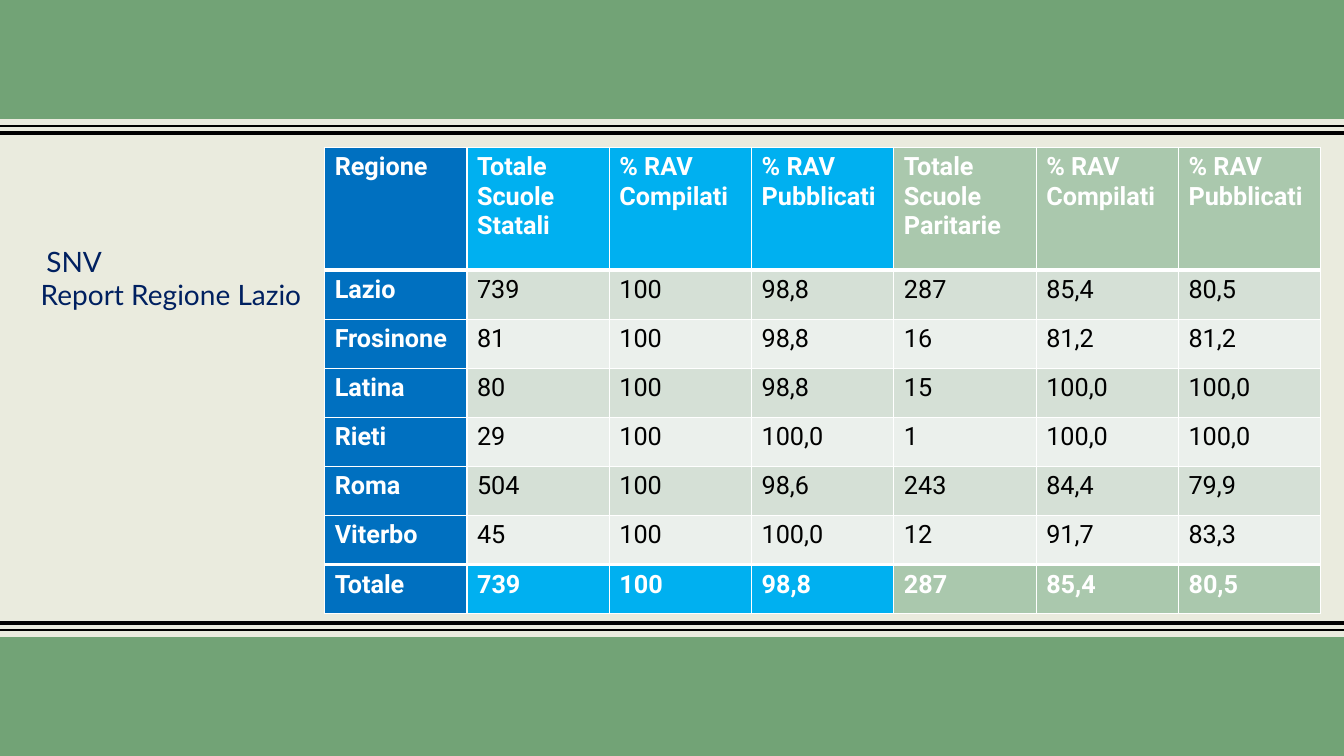
import pptx
import pptx.dml.color
import pptx.enum.shapes
import pptx.enum.text
import pptx.oxml
import pptx.oxml.ns
import pptx.util
from lxml import etree

RGBColor = pptx.dml.color.RGBColor
Inches = pptx.util.Inches
Pt = pptx.util.Pt

CREAM = RGBColor(0xEA, 0xEB, 0xDE)
GREEN = RGBColor(0x72, 0xA3, 0x76)
NAVY = RGBColor(0x00, 0x20, 0x60)
BLUE = RGBColor(0x00, 0x70, 0xC0)
SKY = RGBColor(0x00, 0xB0, 0xF0)
SAGE = RGBColor(0xAA, 0xC8, 0xAD)
BAND_DARK = RGBColor(0xD5, 0xE0, 0xD6)
BAND_LIGHT = RGBColor(0xEB, 0xF0, 0xEC)
BLACK = RGBColor(0, 0, 0)
WHITE = RGBColor(0xFF, 0xFF, 0xFF)

SLIDE_WIDTH, SLIDE_HEIGHT = 13.33, 7.5
BAND_HEIGHT = 1.18
HEADER_HEIGHT = 1.22

ROWS = [
    ["Regione", "Totale\nScuole Statali", "% RAV\nCompilati", "% RAV\nPubblicati",
     "Totale\nScuole\nParitarie", "% RAV\nCompilati", "% RAV\nPubblicati"],
    ["Lazio", "739", "100", "98,8", "287", "85,4", "80,5"],
    ["Frosinone", "81", "100", "98,8", "16", "81,2", "81,2"],
    ["Latina", "80", "100", "98,8", "15", "100,0", "100,0"],
    ["Rieti", "29", "100", "100,0", "1", "100,0", "100,0"],
    ["Roma", "504", "100", "98,6", "243", "84,4", "79,9"],
    ["Viterbo", "45", "100", "100,0", "12", "91,7", "83,3"],
    ["Totale", "739", "100", "98,8", "287", "85,4", "80,5"],
]
COLUMN_COLOURS = [BLUE] + [SKY] * 3 + [SAGE] * 3


def add_rule(slide, y, weight):
    rule = slide.shapes.add_connector(
        pptx.enum.shapes.MSO_CONNECTOR.STRAIGHT,
        0, Inches(y), Inches(SLIDE_WIDTH), Inches(y))
    rule.line.color.rgb = BLACK
    rule.line.width = Pt(weight)
    etree.SubElement(rule._element.spPr, pptx.oxml.ns.qn("a:effectLst"))


def add_band(slide, top, inner_edge, direction):
    """Green band with a thin and a thick rule beyond its inner edge."""
    band = slide.shapes.add_shape(
        pptx.enum.shapes.MSO_SHAPE.RECTANGLE,
        0, Inches(top), Inches(SLIDE_WIDTH), Inches(BAND_HEIGHT))
    band.shadow.inherit = False
    band.fill.solid()
    band.fill.fore_color.rgb = GREEN
    band.line.fill.background()
    for gap, weight in [(0.07, 1), (0.14, 3)]:
        add_rule(slide, inner_edge + direction * gap, weight)


def format_text(text_frame, font_name, size, colour, bold=False):
    for paragraph in text_frame.paragraphs:
        for run in paragraph.runs:
            run.font.name = font_name
            run.font.size = Pt(size)
            run.font.color.rgb = colour
            run.font.bold = bold


def add_title(slide, left, top, width, height):
    box = slide.shapes.add_textbox(
        Inches(left), Inches(top), Inches(width), Inches(height))
    text_frame = box.text_frame
    text_frame.word_wrap = True
    text_frame.vertical_anchor = pptx.enum.text.MSO_ANCHOR.BOTTOM
    text_frame.text = "SNV\nReport Regione Lazio"
    for paragraph, indent in zip(text_frame.paragraphs, [8, 4]):
        paragraph._p.get_or_add_pPr().set("marL", str(Pt(indent)))
    format_text(text_frame, "Lato", 20, NAVY)


def set_borders(cell, top_weight, bottom_weight):
    properties = cell._tc.get_or_add_tcPr()
    weights = {"lnL": 1, "lnR": 1, "lnT": top_weight, "lnB": bottom_weight}
    for position, (tag, weight) in enumerate(weights.items()):
        border = pptx.oxml.parse_xml(
            f'<a:{tag} {pptx.oxml.ns.nsdecls("a")} w="{Pt(weight)}">'
            f'<a:solidFill><a:srgbClr val="{WHITE}"/></a:solidFill></a:{tag}>')
        properties.insert(position, border)


def add_school_table(slide, left, top, width, height):
    last = len(ROWS) - 1
    table = slide.shapes.add_table(
        len(ROWS), len(COLUMN_COLOURS),
        Inches(left), Inches(top), Inches(width), Inches(height)).table
    for column in table.columns:
        column.width = Inches(width / len(COLUMN_COLOURS))
    for row_index, values in enumerate(ROWS):
        is_edge = row_index in (0, last)
        row_height = HEADER_HEIGHT if row_index == 0 else (height - HEADER_HEIGHT) / last
        table.rows[row_index].height = Inches(row_height)
        for column_index, value in enumerate(values):
            cell = table.cell(row_index, column_index)
            cell.text_frame.text = value
            strong = is_edge or column_index == 0
            band_colour = BAND_DARK if row_index % 2 else BAND_LIGHT
            cell.fill.solid()
            cell.fill.fore_color.rgb = COLUMN_COLOURS[column_index] if strong else band_colour
            format_text(cell.text_frame, "Roboto", 18, WHITE if strong else BLACK, strong)
            set_borders(cell,
                        3 if row_index in (1, last) else 1,
                        3 if row_index in (0, last - 1) else 1)


def main():
    presentation = pptx.Presentation()
    presentation.slide_width = Inches(SLIDE_WIDTH)
    presentation.slide_height = Inches(SLIDE_HEIGHT)
    slide = presentation.slides.add_slide(presentation.slide_layouts[6])
    slide.background.fill.solid()
    slide.background.fill.fore_color.rgb = CREAM
    bottom_band = SLIDE_HEIGHT - BAND_HEIGHT
    add_band(slide, 0, BAND_HEIGHT, 1)
    add_band(slide, bottom_band, bottom_band, -1)
    add_title(slide, 0.25, 2.03, 2.89, 1.11)
    add_school_table(slide, 3.22, 1.46, 9.88, 4.63)
    presentation.save("out.pptx")


if __name__ == "__main__":
    main()
